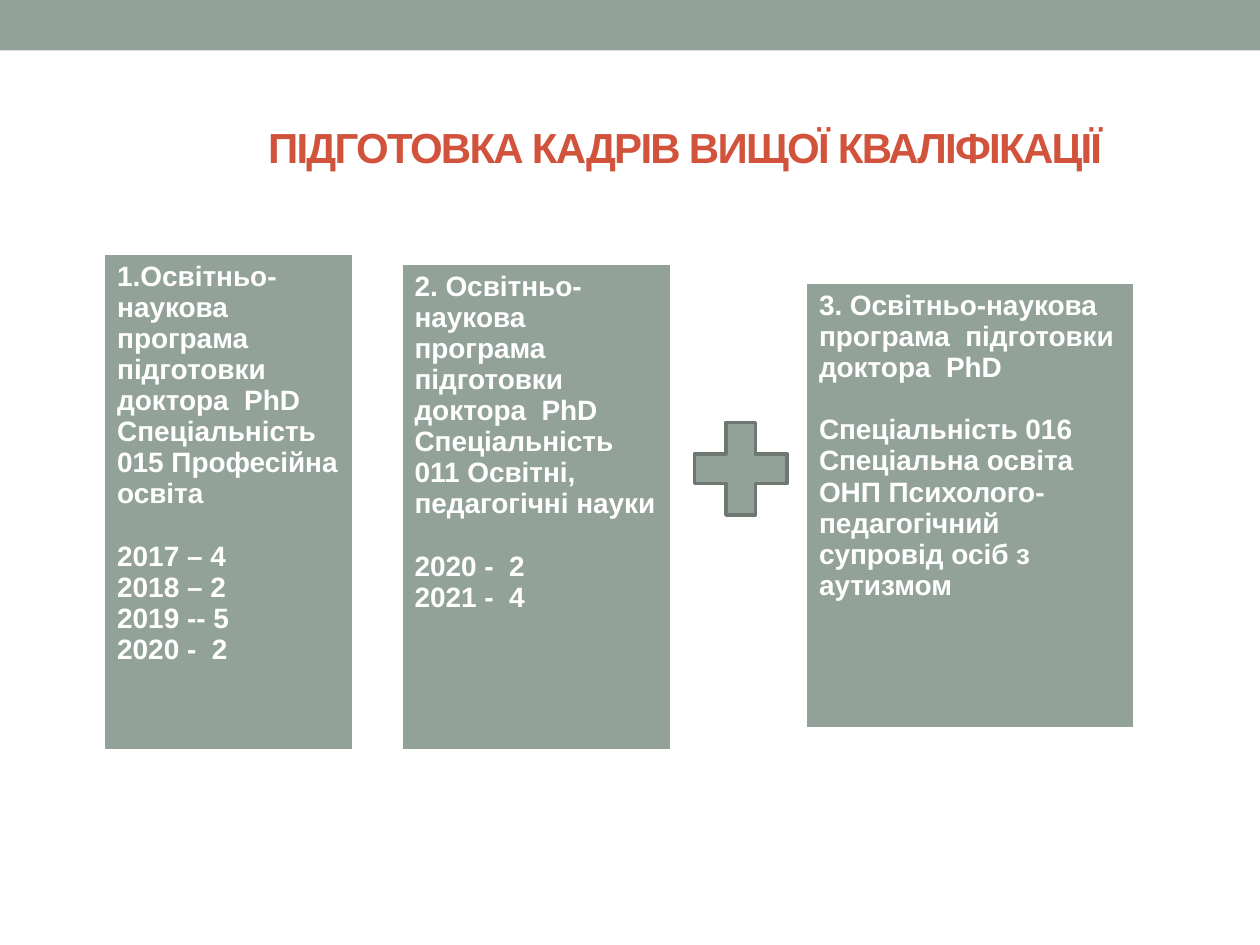
from lxml import etree
from pptx import Presentation
from pptx.enum import shapes, text
from pptx.dml.color import RGBColor
from pptx.oxml import ns
from pptx.util import Inches, Pt

COLORS = {"sage": "93A299", "outline": "6D7871", "title": "D2533C", "white": "FFFFFF"}
BORDERS = {"lnL": 1, "lnR": 1, "lnT": 1, "lnB": 3}
PROGRAMMES = [
    (0.83, 2.02, 1.97, 3.94, [
        ["1.Освітньо-наукова програма  підготовки доктора  PhD",
         "Спеціальність 015 Професійна освіта"],
        ["2017 – 4", "2018 – 2", "2019 -- 5", "2020 -  2"]]),
    (3.19, 2.1, 2.13, 3.86, [
        ["2. Освітньо-наукова програма  підготовки доктора  PhD",
         "Спеціальність 011 Освітні, педагогічні науки"],
        ["2020 -  2", "2021 -  4"]]),
    (6.4, 2.25, 2.6, 3.54, [
        ["3. Освітньо-наукова програма  підготовки доктора  PhD"],
        ["Спеціальність 016", "Спеціальна освіта",
         "ОНП Психолого-педагогічний супровід осіб з аутизмом"]]),
]


def color(name):
    return RGBColor.from_string(COLORS[name])


def style(paragraph, size, color_name):
    font = paragraph.font
    font.name = "Arial"
    font.size = Pt(size)
    font.bold = True
    font.color.rgb = color(color_name)


presentation = Presentation()
presentation.slide_width = Inches(10)
presentation.slide_height = Inches(7.5)
slide = presentation.slides.add_slide(presentation.slide_layouts[6])

band = slide.shapes.add_shape(
    shapes.MSO_SHAPE.RECTANGLE, 0, 0, Inches(10), Inches(0.4))
band.shadow.inherit = False
band.fill.solid()
band.fill.fore_color.rgb = color("sage")
band.line.fill.background()

title = slide.shapes.add_textbox(Inches(2.03), Inches(0.62), Inches(7.47), Inches(1.08))
title.text_frame.word_wrap = True
title.text_frame.vertical_anchor = text.MSO_ANCHOR.MIDDLE
paragraph = title.text_frame.paragraphs[0]
run = paragraph.add_run()
run.text = "ПІДГОТОВКА КАДРІВ ВИЩОЇ КВАЛІФІКАЦІЇ"
run.font._element.set("spc", "-100")
style(paragraph, 24, "title")

for left, top, width, height, groups in PROGRAMMES:
    table = slide.shapes.add_table(
        1, 1, Inches(left), Inches(top), Inches(width), Inches(height)).table
    cell = table.cell(0, 0)
    properties = cell._tc.get_or_add_tcPr()
    for side, points in BORDERS.items():
        border = etree.SubElement(properties, ns.qn(f"a:{side}"), w=str(Pt(points)))
        fill = etree.SubElement(border, ns.qn("a:solidFill"))
        etree.SubElement(fill, ns.qn("a:srgbClr"), val=COLORS["white"])
    cell.fill.solid()
    cell.fill.fore_color.rgb = color("sage")
    cell.text = "\n".join(line for group in groups for line in group)
    for paragraph in cell.text_frame.paragraphs:
        style(paragraph, 16, "white")
    cell.text_frame.paragraphs[len(groups[0])].space_before = Pt(18)

plus = slide.shapes.add_shape(
    shapes.MSO_SHAPE.MATH_PLUS, Inches(5.38), Inches(3.22), Inches(1), Inches(1))
plus.shadow.inherit = False
plus.fill.solid()
plus.fill.fore_color.rgb = color("sage")
plus.line.color.rgb = color("outline")
plus.line.width = Pt(2.08)

presentation.save("out.pptx")
